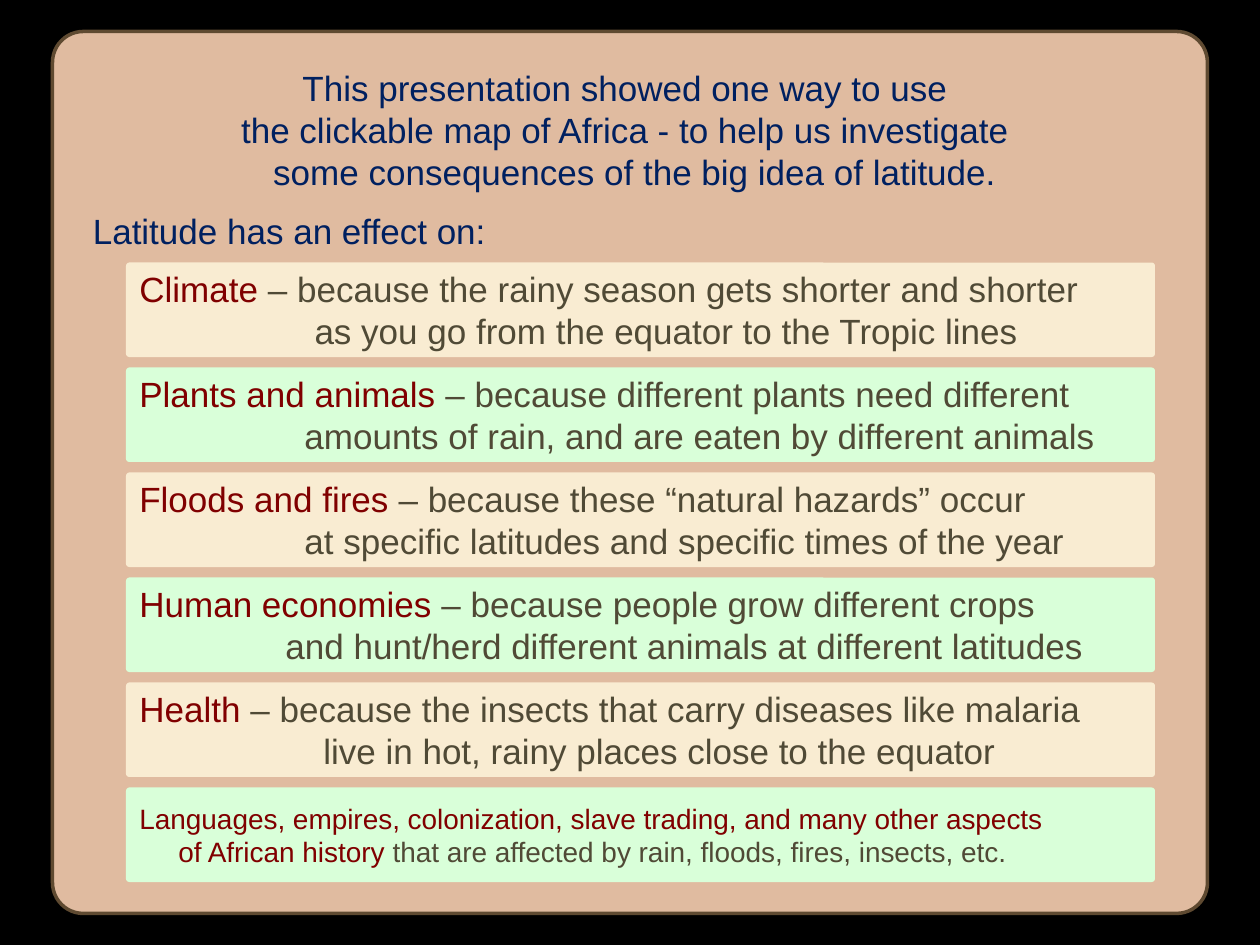
from dataclasses import dataclass

from pptx import Presentation
from pptx.dml.color import RGBColor as RGB
from pptx.enum.shapes import MSO_SHAPE as Shape
from pptx.enum.text import MSO_ANCHOR as Anchor, PP_ALIGN as Align
from pptx.util import Inches, Pt


@dataclass(frozen=True)
class Theme:
    font: str = "Arial"
    backdrop: str = "000000"
    panel: str = "E0BBA0"
    border: str = "5F4A31"
    intro: str = "002060"
    topic: str = "800000"
    reason: str = "504A36"
    cards: tuple = ("F9ECD2", "D9FFD9")
    body: int = 20
    small: int = 16
    corner: float = 0.035


THEME = Theme()
GRID = 12  # grid columns and rows per inch

INTRO = (
    "This presentation showed one way to use ",
    "the clickable map of Africa - to help us investigate ",
    " some consequences of the big idea of latitude.",
)

# Topic, reason, second line, indent of the second line in inches
EFFECTS = (
    ("Climate", " – because the rainy season gets shorter and shorter",
     "as you go from the equator to the Tropic lines", 1.39),
    ("Plants and animals", " – because different plants need different",
     "amounts of rain, and are eaten by different animals", 1.31),
    ("Floods and fires ", "– because these “natural hazards” occur",
     "at specific latitudes and specific times of the year", 1.31),
    ("Human economies ", "– because people grow different crops",
     "and hunt/herd different animals at different latitudes", 1.16),
    ("Health ", "– because the insects that carry diseases like malaria",
     "live in hot, rainy places close to the equator", 1.46),
)


def add_box(s, col, row, cols, rows, fill, line=None):
    """Add a rounded box placed in grid units."""
    box = [Inches(n / GRID) for n in (col, row, cols, rows)]
    sp = s.shapes.add_shape(Shape.ROUNDED_RECTANGLE, *box)
    sp.adjustments[0] = THEME.corner
    sp.shadow.inherit = False
    sp.fill.solid()
    sp.fill.fore_color.rgb = RGB.from_string(fill)
    if line:
        sp.line.color.rgb = RGB.from_string(line)
        sp.line.width = Pt(2)
    else:
        sp.line.fill.background()
    sp.text_frame.word_wrap = True
    sp.text_frame.vertical_anchor = Anchor.MIDDLE
    return sp


def add_line(tf, *runs, size=THEME.body, align=Align.LEFT, indent=0, before=0):
    """Add a paragraph made of (text, colour) runs."""
    p = tf.paragraphs[0]
    if p.runs:
        p = tf.add_paragraph()
    p.alignment = align
    p.space_before = Pt(before)
    if indent:
        pPr = p._p.get_or_add_pPr()
        pPr.set("marL", str(Inches(indent)))
        pPr.set("indent", "0")
    for text, color in runs:
        r = p.add_run()
        r.text = text
        r.font.name = THEME.font
        r.font.size = Pt(size)
        r.font.color.rgb = RGB.from_string(color)


def add_panel(s):
    tf = add_box(s, 5, 3, 110, 84, THEME.panel, THEME.border).text_frame
    tf.vertical_anchor = Anchor.TOP
    tf.margin_top = Inches(0.21)
    for text in INTRO:
        add_line(tf, (text, THEME.intro), align=Align.CENTER)
    add_line(tf, ("Latitude has an effect on:", THEME.intro),
             indent=0.15, before=9.5)


def add_card(s, index):
    """Add the card at this place in the stack, in alternating colours."""
    fill = THEME.cards[index % len(THEME.cards)]
    return add_box(s, 12, 25 + 10 * index, 98, 9, fill).text_frame


def main():
    prs = Presentation()
    prs.slide_width, prs.slide_height = Inches(10), Inches(7.5)
    s = prs.slides.add_slide(prs.slide_layouts[6])
    s.background.fill.solid()
    s.background.fill.fore_color.rgb = RGB.from_string(THEME.backdrop)

    # Panel with the introduction
    add_panel(s)

    # Effects of latitude
    for i, (topic, reason, more, indent) in enumerate(EFFECTS):
        tf = add_card(s, i)
        add_line(tf, (topic, THEME.topic), (reason, THEME.reason))
        add_line(tf, (more, THEME.reason), indent=indent)

    # History card in smaller type
    tf = add_card(s, len(EFFECTS))
    add_line(tf, ("Languages, empires, colonization, slave trading, "
                  "and many other aspects", THEME.topic), size=THEME.small)
    add_line(tf, ("of African history ", THEME.topic),
             ("that are affected by rain, floods, fires, insects, etc.",
              THEME.reason), size=THEME.small, indent=0.31)

    prs.save("out.pptx")


if __name__ == "__main__":
    main()
